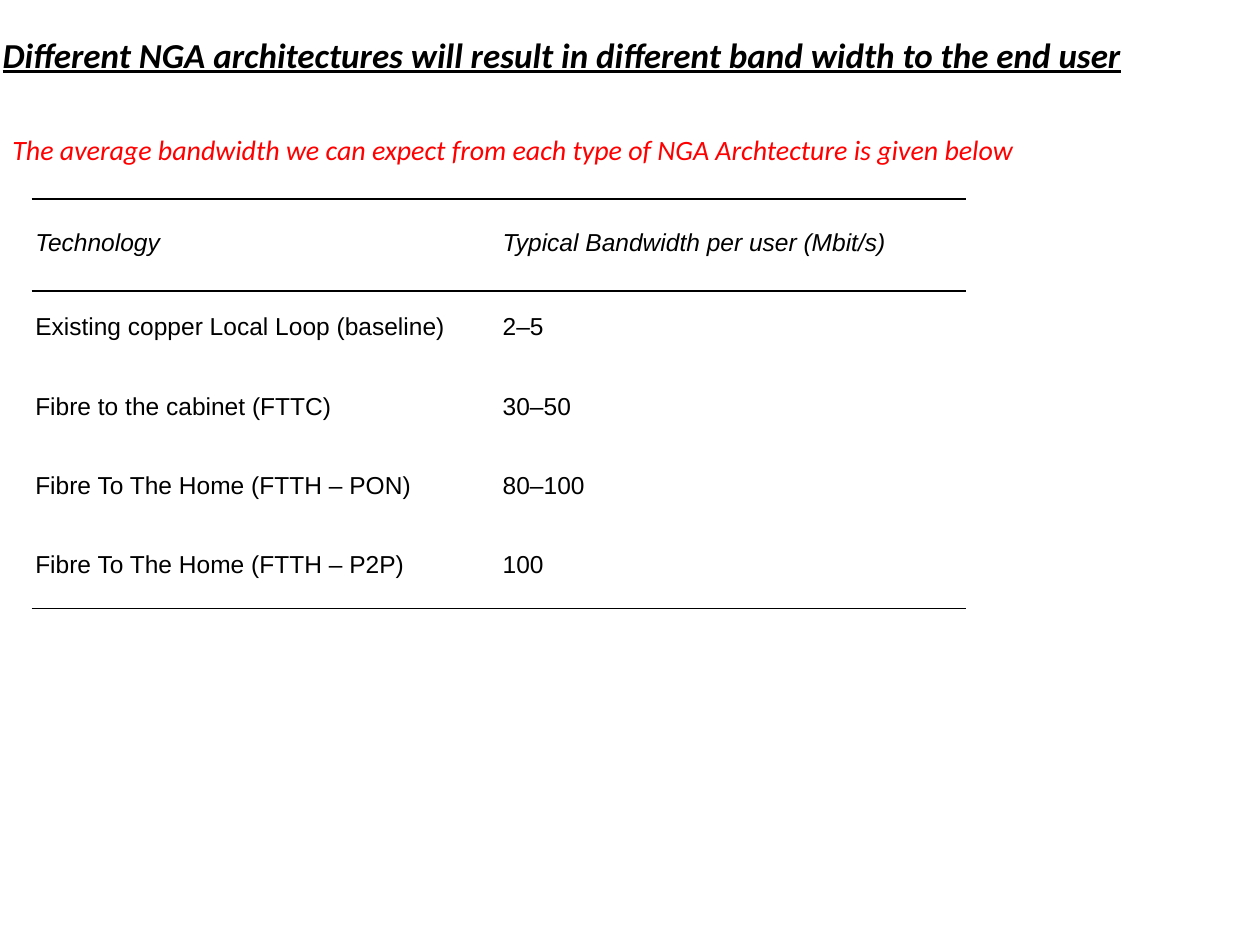
from lxml import etree
from pptx import Presentation
from pptx.dml.color import RGBColor
from pptx.enum import text
from pptx.oxml.ns import qn
from pptx.util import Inches, Pt

TITLE = "Different NGA architectures will result in different band width to the end user"
INTRO = "The average bandwidth we can expect from each type of NGA Archtecture is given below"
ROWS = [
    ("Technology", "Typical Bandwidth per user (Mbit/s)"),
    ("Existing copper Local Loop (baseline)", "2–5"),
    ("Fibre to the cabinet (FTTC)", "30–50"),
    ("Fibre To The Home (FTTH – PON)", "80–100"),
    ("Fibre To The Home (FTTH – P2P)", "100"),
]
BLACK, RED = "000000", "FF0000"
COL_W, HEADER_H, ROW_H = 3.71, 0.73, 0.63


def style(p, font, size, color, bold=False, italic=False, underline=False):
    for r in p.runs:
        f = r.font
        f.name, f.size = font, Pt(size)
        f.bold, f.italic, f.underline = bold, italic, underline
        f.color.rgb = RGBColor.from_string(color)


def write_line(sp, words, box, size, color, **emphasis):
    sp.left, sp.top, sp.width, sp.height = map(Inches, box)
    tf = sp.text_frame
    tf.text = words
    tf.word_wrap = True
    tf.auto_size = text.MSO_AUTO_SIZE.NONE
    tf.vertical_anchor = text.MSO_ANCHOR.MIDDLE
    p = tf.paragraphs[0]
    p.alignment = text.PP_ALIGN.JUSTIFY
    style(p, "Calibri", size, color, italic=True, **emphasis)


def set_borders(cell, ruled):
    """Rule the named sides in black and clear the others."""
    tc_pr = cell._tc.get_or_add_tcPr()
    for i, side in enumerate(("lnL", "lnR", "lnT", "lnB")):
        ln = etree.Element(qn("a:" + side), w=str(Pt(1)))
        if side in ruled:
            fill = etree.SubElement(ln, qn("a:solidFill"))
            etree.SubElement(fill, qn("a:srgbClr"), val=BLACK)
        else:
            etree.SubElement(ln, qn("a:noFill"))
        tc_pr.insert(i, ln)


def add_bandwidth_table(s):
    last = len(ROWS) - 1
    height = HEADER_H + last * ROW_H
    frame = s.shapes.add_table(len(ROWS), 2, Inches(0.25), Inches(1.58),
                               Inches(2 * COL_W), Inches(height))
    table = frame.table
    table.first_row = table.horz_banding = False
    for col in table.columns:
        col.width = Inches(COL_W)
    ruled = {0: ("lnT", "lnB"), 1: ("lnT",), last: ("lnB",)}
    for i, row in enumerate(ROWS):
        header = i == 0
        table.rows[i].height = Inches(HEADER_H if header else ROW_H)
        for j, words in enumerate(row):
            cell = table.cell(i, j)
            cell.text = words
            cell.fill.background()
            cell.margin_left = cell.margin_right = Inches(0.03)
            cell.margin_top = Inches(0.26 if header else 0.23)
            cell.margin_bottom = 0
            p = cell.text_frame.paragraphs[0]
            p.line_spacing = Pt(14 if header else 12)
            style(p, "Arial", 14, BLACK, italic=header)
            set_borders(cell, ruled.get(i, ()))


def main():
    prs = Presentation()
    prs.slide_width, prs.slide_height = Inches(10), Inches(7.5)
    s = prs.slides.add_slide(prs.slide_layouts[5])
    add_bandwidth_table(s)
    write_line(s.shapes.title, TITLE, (-0.08, 0.21, 10.4, 0.44), 20, BLACK,
               bold=True, underline=True)
    intro = s.shapes.add_textbox(0, 0, 0, 0)
    write_line(intro, INTRO, (0, 1, 9.05, 0.37), 16, RED)
    prs.save("out.pptx")


if __name__ == "__main__":
    main()
